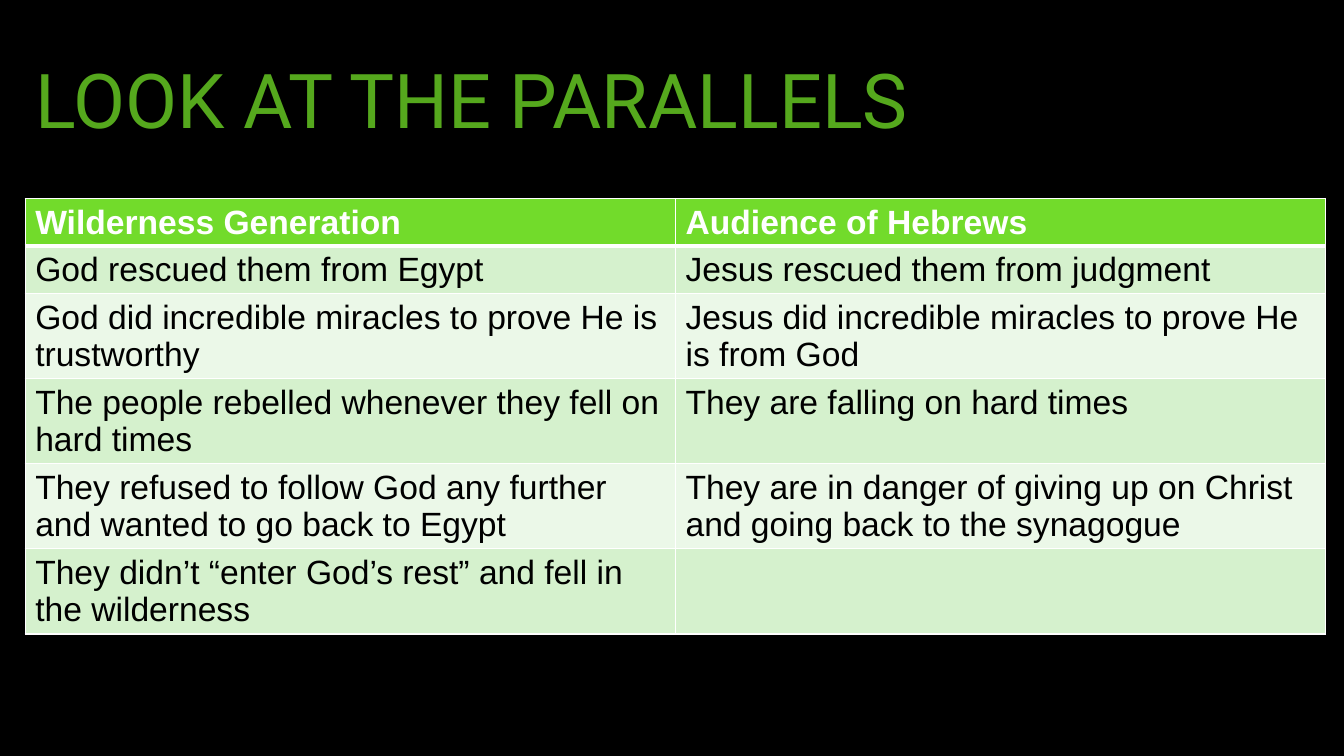
"""Build a slide comparing the wilderness generation with the audience of Hebrews."""
from lxml import etree
from pptx import Presentation
from pptx.dml.color import RGBColor
from pptx.enum import text
from pptx.oxml import ns
from pptx.util import Inches, Pt

HUES = {
    "back": "000000", "title": "55A81D", "head": "72DB2B", "odd": "D5F1CD",
    "even": "EBF8E8", "white": "FFFFFF", "ink": "000000",
}
ROWS = [
    ("Wilderness Generation", "Audience of Hebrews"),
    ("God rescued them from Egypt", "Jesus rescued them from judgment"),
    ("God did incredible miracles to prove He is trustworthy",
     "Jesus did incredible miracles to prove He is from God"),
    ("The people rebelled whenever they fell on hard times",
     "They are falling on hard times"),
    ("They refused to follow God any further and wanted to go back to Egypt",
     "They are in danger of giving up on Christ and going back to the synagogue"),
    ("They didn’t “enter God’s rest” and fell in the wilderness", ""),
]


def style(font, face, size, hue, bold=False):
    font.name, font.size, font.bold = face, Pt(size), bold
    font.color.rgb = RGBColor.from_string(HUES[hue])


def edge(cell, side, width):
    line = etree.SubElement(cell._tc.get_or_add_tcPr(), ns.qn(f"a:ln{side}"), w=str(Pt(width)))
    fill = etree.SubElement(line, ns.qn("a:solidFill"))
    etree.SubElement(fill, ns.qn("a:srgbClr"), val=HUES["white"])


deck = Presentation()
deck.slide_width, deck.slide_height = Inches(13.33), Inches(7.5)
slide = deck.slides.add_slide(deck.slide_layouts[5])
slide.background.fill.solid()
slide.background.fill.fore_color.rgb = RGBColor.from_string(HUES["back"])

title = slide.shapes.title
title.left, title.top = Inches(0.25), Inches(0.22)
title.width, title.height = Inches(12.9), Inches(1.62)
frame = title.text_frame
frame.text = "LOOK AT THE PARALLELS"
frame.vertical_anchor = text.MSO_ANCHOR.MIDDLE
para = frame.paragraphs[0]
para.alignment = text.PP_ALIGN.LEFT
para.line_spacing = 0.9
style(para.runs[0].font, "Roboto", 54, "title")

table = slide.shapes.add_table(
    len(ROWS), 2, Inches(0.25), Inches(1.97), Inches(12.9), Inches(0.41 * len(ROWS))).table
for r, row in enumerate(ROWS):
    for c, words in enumerate(row):
        cell = table.cell(r, c)
        for side in "LRT":
            edge(cell, side, 3 if side == "T" and r == 1 else 1)
        edge(cell, "B", 3 if r == 0 else 1)
        cell.fill.solid()
        hue = "head" if r == 0 else "odd" if r % 2 else "even"
        cell.fill.fore_color.rgb = RGBColor.from_string(HUES[hue])
        if words:
            cell.text_frame.text = words
            run = cell.text_frame.paragraphs[0].runs[0]
            style(run.font, "Arial", 24, "ink" if r else "white", r == 0)

deck.save("out.pptx")
